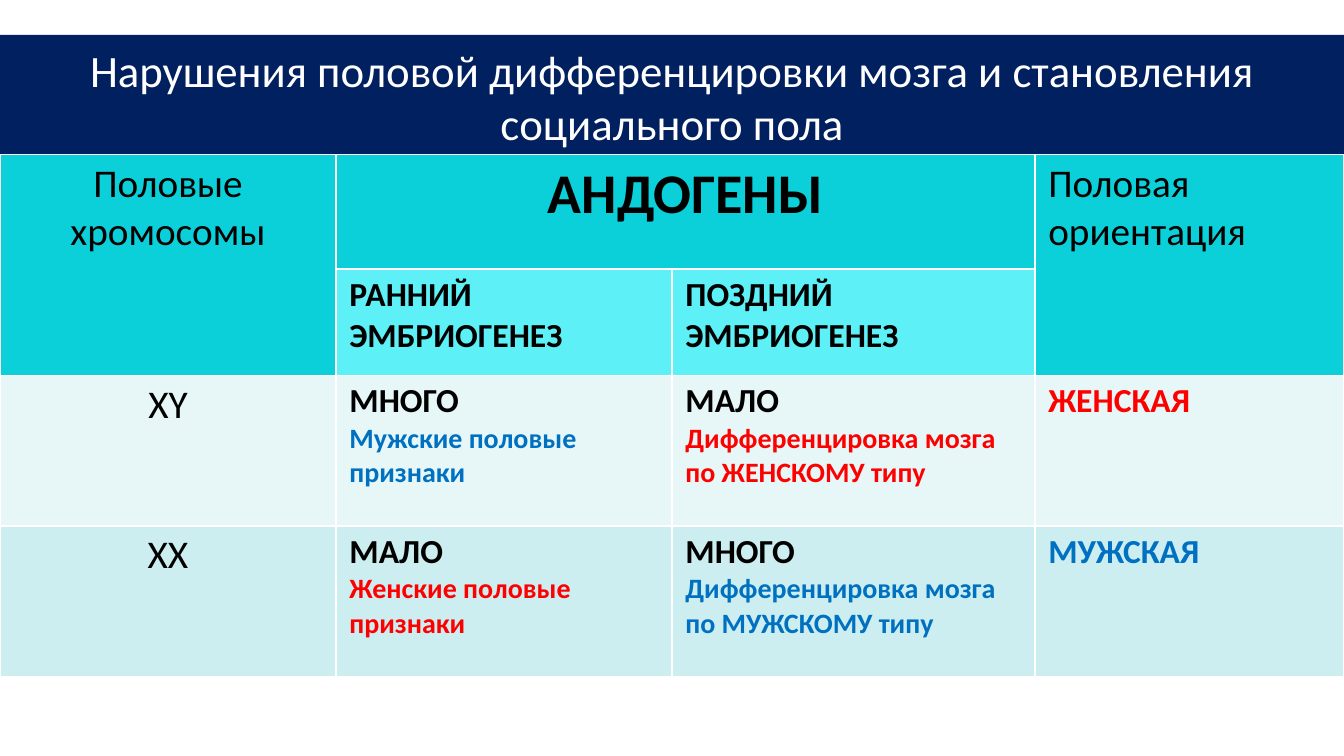
from pptx import Presentation
from pptx.dml.color import RGBColor
from pptx.enum.text import MSO_ANCHOR, MSO_AUTO_SIZE, PP_ALIGN
from pptx.util import Inches, Pt

FONT = "Calibri"
NAVY = RGBColor(0x00, 0x20, 0x60)
WHITE = RGBColor(0xFF, 0xFF, 0xFF)
BLACK = RGBColor(0x00, 0x00, 0x00)
RED = RGBColor(0xFF, 0x00, 0x00)
BLUE = RGBColor(0x00, 0x70, 0xC0)
HEADER = RGBColor(0x0B, 0xD0, 0xD9)
SUBHEADER = RGBColor(0x5E, 0xF0, 0xF7)
XY_ROW = RGBColor(0xE7, 0xF7, 0xF8)
XX_ROW = RGBColor(0xCC, 0xEE, 0xF1)

COLS = [2.5, 2.5, 2.7, 2.3]
ROWS = [0.85, 0.68, 1.12, 1.12]
ROW_FILLS = [HEADER, SUBHEADER, XY_ROW, XX_ROW]
MERGES = [((0, 0), (1, 0)), ((0, 1), (0, 2)), ((0, 3), (1, 3))]


def plain(text, size=21):
    return text, size, False, BLACK


def strong(text, size=18, color=BLACK):
    return text, size, True, color


def detail(text, color):
    return strong(text, 15, color)


CENTERED = {(0, 0), (0, 1), (2, 0), (3, 0)}
CELLS = {
    (0, 0): [plain("Половые хромосомы")],
    (0, 1): [strong("АНДОГЕНЫ", 30)],
    (0, 3): [plain("Половая ориентация")],
    (1, 1): [strong("РАННИЙ ЭМБРИОГЕНЕЗ")],
    (1, 2): [strong("ПОЗДНИЙ ЭМБРИОГЕНЕЗ")],
    (2, 0): [plain("XY")],
    (2, 1): [strong("МНОГО"), detail("Мужские половые признаки", BLUE)],
    (2, 2): [strong("МАЛО"), detail("Дифференцировка мозга по ЖЕНСКОМУ типу", RED)],
    (2, 3): [strong("ЖЕНСКАЯ", color=RED)],
    (3, 0): [plain("XX")],
    (3, 1): [strong("МАЛО"), detail("Женские половые признаки", RED)],
    (3, 2): [strong("МНОГО"), detail("Дифференцировка мозга по МУЖСКОМУ типу", BLUE)],
    (3, 3): [strong("МУЖСКАЯ", color=BLUE)],
}


def write(tf, lines, align):
    """Fill a text frame with one paragraph per (text, size, bold, color)."""
    for i, (text, size, bold, color) in enumerate(lines):
        p = tf.paragraphs[0] if i == 0 else tf.add_paragraph()
        p.alignment = align
        r = p.add_run()
        r.text = text
        r.font.name = FONT
        r.font.size = Pt(size)
        r.font.bold = bold
        r.font.color.rgb = color


def add_title(slide, x, y, w, h):
    s = slide.shapes.title
    s.left, s.top, s.width, s.height = (Inches(v) for v in (x, y, w, h))
    s.fill.solid()
    s.fill.fore_color.rgb = NAVY
    tf = s.text_frame
    tf.word_wrap = True
    tf.auto_size = MSO_AUTO_SIZE.NONE
    tf.vertical_anchor = MSO_ANCHOR.MIDDLE
    text = "Нарушения половой дифференцировки мозга и становления социального пола"
    write(tf, [(text, 24, False, WHITE)], PP_ALIGN.CENTER)


def add_hormone_table(slide, x, y, w, h):
    """Add the table, its columns and rows sharing the box in proportion."""
    table = slide.shapes.add_table(
        len(ROWS), len(COLS), Inches(x), Inches(y), Inches(w), Inches(h)
    ).table
    for col, width in zip(table.columns, COLS):
        col.width = Inches(w * width / sum(COLS))
    for row, height in zip(table.rows, ROWS):
        row.height = Inches(h * height / sum(ROWS))
    for cell in table.iter_cells():
        cell.margin_left = cell.margin_right = Inches(0.1)
        cell.margin_top = cell.margin_bottom = Inches(0.04)
    for first, last in MERGES:
        table.cell(*first).merge(table.cell(*last))
    for (row, col), lines in CELLS.items():
        cell = table.cell(row, col)
        cell.fill.solid()
        cell.fill.fore_color.rgb = ROW_FILLS[row]
        align = PP_ALIGN.CENTER if (row, col) in CENTERED else PP_ALIGN.LEFT
        write(cell.text_frame, lines, align)


def main():
    prs = Presentation()
    prs.slide_width = Inches(10)
    prs.slide_height = prs.slide_width * 9 // 16
    slide = prs.slides.add_slide(prs.slide_layouts[5])
    add_title(slide, 0, 0.26, 10, 0.91)
    add_hormone_table(slide, 0, 1.15, 10, 3.77)
    prs.save("out.pptx")


if __name__ == "__main__":
    main()
